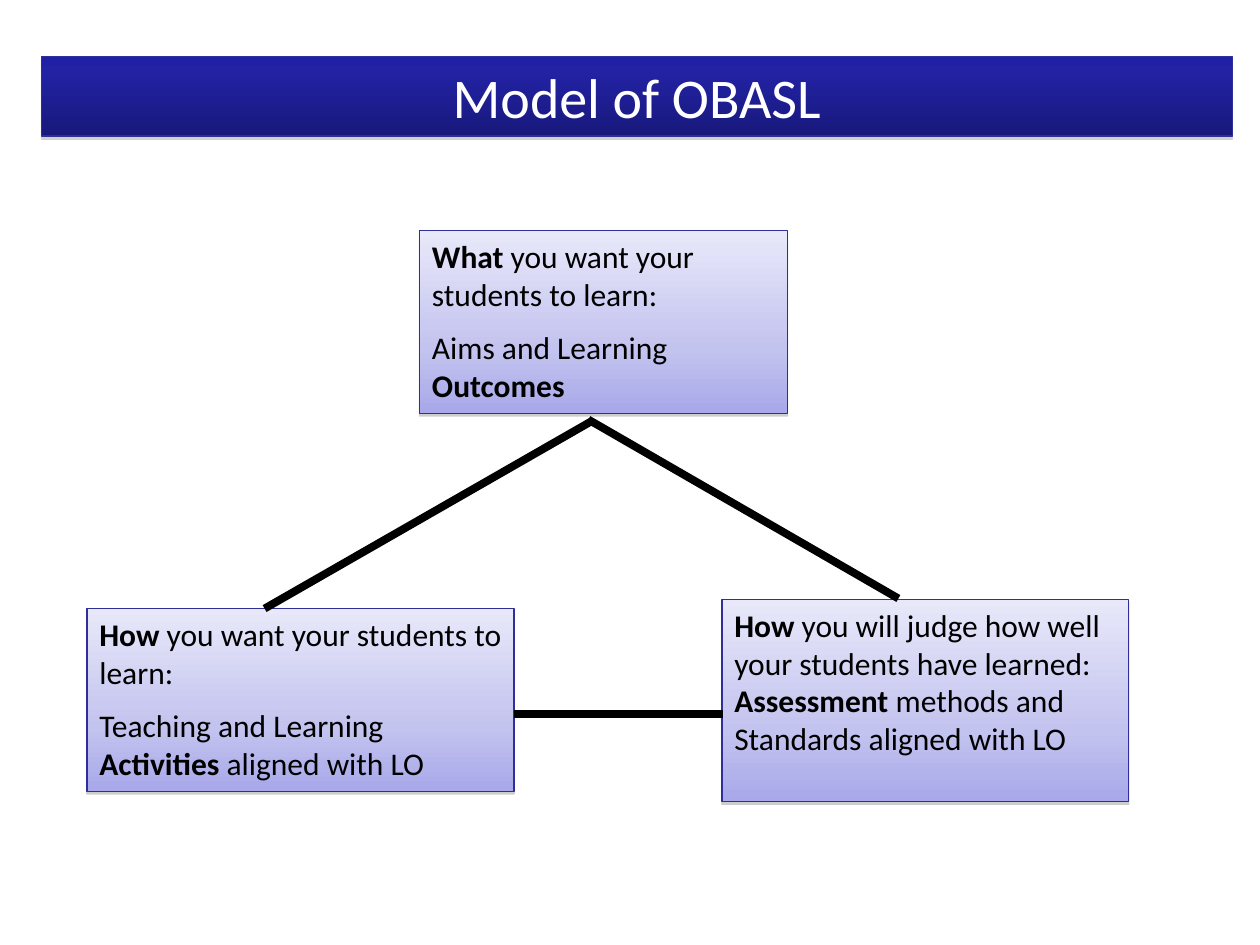
from lxml.etree import SubElement
from pptx import Presentation
from pptx.dml.color import RGBColor
from pptx.enum.shapes import MSO_CONNECTOR, MSO_SHAPE
from pptx.enum.text import MSO_ANCHOR, MSO_AUTO_SIZE, PP_ALIGN
from pptx.oxml.ns import qn
from pptx.util import Inches, Pt

COLORS = {
    "border": "2F2F98",
    "shadow": "808080",
    "text": "000000",
    "title": "FFFFFF",
    "connector": "000000",
}
# Gradient stops: percent along the fill, colour
BOX_FILL = [(0, "E8E8FA"), (65, "C3C3EF"), (100, "A8A8EA")]
TITLE_FILL = [(0, "2020A6"), (20, "2222A3"), (100, "18187C")]


class ModelSlide:
    """Holds the slide and the style shared by its elements."""

    font = "Calibri"

    def __init__(self, slide):
        self.s = slide

    def _gradient(self, sp, stops):
        """Fill from top to bottom with any number of stops."""
        sp.fill.gradient()
        sp.fill.gradient_angle = 270
        gs_list = sp._element.spPr.find(qn("a:gradFill")).find(qn("a:gsLst"))
        for gs in list(gs_list):
            gs_list.remove(gs)
        for pos, color in stops:
            gs = SubElement(gs_list, qn("a:gs"), pos=str(pos * 1000))
            SubElement(gs, qn("a:srgbClr"), val=color)

    def _shadow(self, sp, distance, opacity):
        sp.shadow.inherit = False
        effects = sp._element.spPr.find(qn("a:effectLst"))
        outer = SubElement(effects, qn("a:outerShdw"), blurRad="0",
                           dist=str(Pt(distance)), dir="5400000", rotWithShape="0")
        color = SubElement(outer, qn("a:srgbClr"), val=COLORS["shadow"])
        SubElement(color, qn("a:alpha"), val=str(opacity * 1000))

    def _panel(self, at, stops, distance, opacity):
        sp = self.s.shapes.add_shape(MSO_SHAPE.RECTANGLE, *map(Inches, at))
        self._gradient(sp, stops)
        sp.line.color.rgb = RGBColor.from_string(COLORS["border"])
        sp.line.width = Pt(0.75)
        self._shadow(sp, distance, opacity)
        tf = sp.text_frame
        tf.word_wrap = True
        tf.auto_size = MSO_AUTO_SIZE.SHAPE_TO_FIT_TEXT
        tf.vertical_anchor = MSO_ANCHOR.TOP
        return tf

    def _run(self, p, text, size, color, bold=False):
        r = p.add_run()
        r.text = text
        r.font.name = self.font
        r.font.size = Pt(size)
        r.font.bold = bold
        r.font.color.rgb = RGBColor.from_string(color)

    def title(self, at, text):
        p = self._panel(at, TITLE_FILL, 1.8, 35).paragraphs[0]
        p.alignment = PP_ALIGN.CENTER
        self._run(p, text, 32, COLORS["title"])

    def box(self, at, paragraphs, gap=0):
        """Each paragraph is a list of (text, bold) runs; gap is in points."""
        tf = self._panel(at, BOX_FILL, 1.6, 38)
        for i, runs in enumerate(paragraphs):
            p = tf.add_paragraph() if i else tf.paragraphs[0]
            p.alignment = PP_ALIGN.LEFT
            if i:
                p.space_before = Pt(gap)
            for text, bold in runs:
                self._run(p, text, 18, COLORS["text"], bold)

    def connector(self, start, end):
        line = self.s.shapes.add_connector(
            MSO_CONNECTOR.STRAIGHT, *map(Inches, start + end))
        line.line.color.rgb = RGBColor.from_string(COLORS["connector"])
        line.line.width = Pt(4.5)
        SubElement(line._element.spPr, qn("a:effectLst"))


def main():
    prs = Presentation()
    prs.slide_width, prs.slide_height = Inches(10), Inches(7.5)
    model = ModelSlide(prs.slides.add_slide(prs.slide_layouts[6]))

    model.box((3.33, 1.83, 2.92, 1.45), [
        [("What ", True), ("you want your students to learn:", False)],
        [("Aims and Learning ", False), ("Outcomes", True)],
    ], gap=9)
    model.box((0.69, 4.83, 3.39, 1.45), [
        [("How ", True), ("you want your students to learn:", False)],
        [("Teaching and Learning ", False), ("Activities", True),
         (" aligned with LO", False)],
    ], gap=9)
    model.box((5.73, 4.76, 3.23, 1.6), [
        [("How", True),
         (" you will judge how well your students have learned:", False)],
        [("Assessment ", True),
         ("methods and Standards aligned with LO", False)],
    ])

    model.connector((4.7, 3.34), (2.1, 4.83))
    model.connector((4.08, 5.67), (5.74, 5.67))
    model.connector((4.67, 3.33), (7.13, 4.75))

    model.title((0.33, 0.45, 9.45, 0.63), "Model of OBASL")
    prs.save("out.pptx")


if __name__ == "__main__":
    main()
